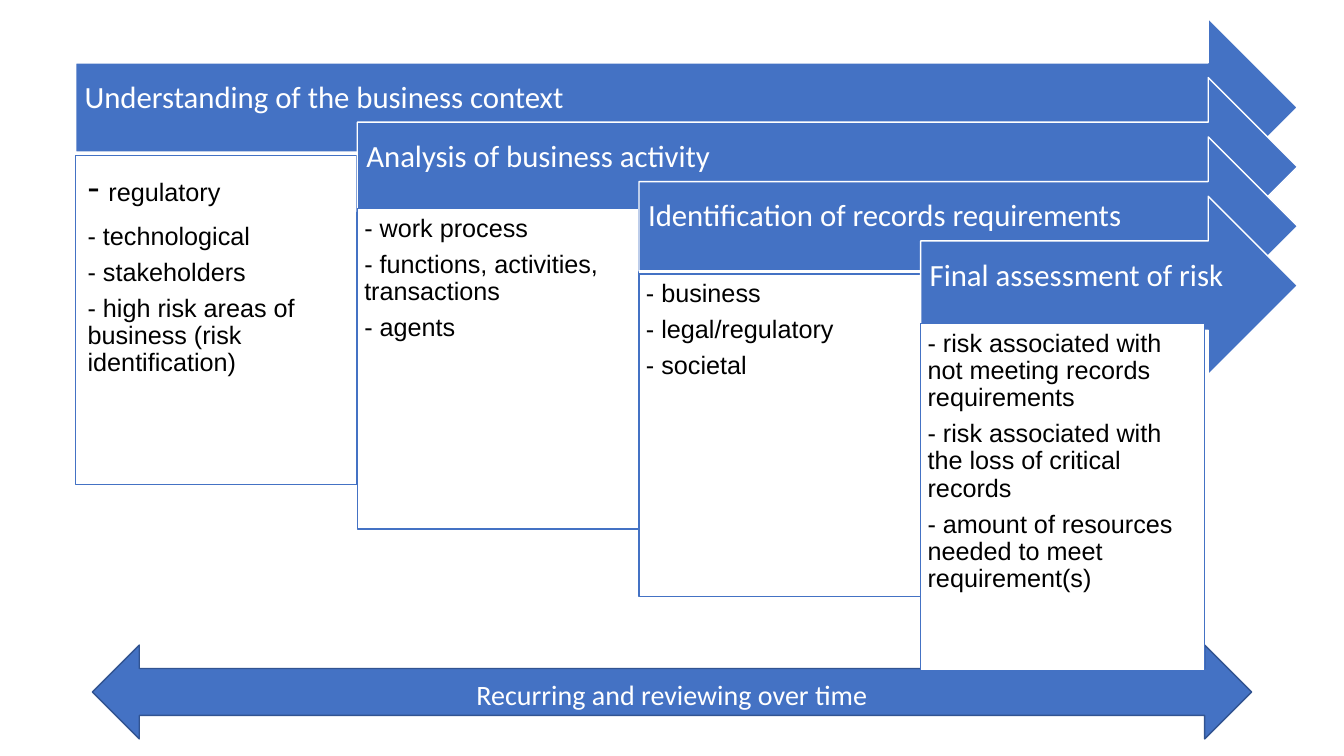
from dataclasses import dataclass
from pptx import Presentation
from pptx.dml.color import RGBColor
from pptx.enum.shapes import MSO_SHAPE
from pptx.enum.text import MSO_ANCHOR, PP_ALIGN
from pptx.util import Pt

ARROW, BOX, BOTH = MSO_SHAPE.RIGHT_ARROW, MSO_SHAPE.RECTANGLE, MSO_SHAPE.LEFT_RIGHT_ARROW
TOP, MIDDLE = MSO_ANCHOR.TOP, MSO_ANCHOR.MIDDLE
LEFT, CENTER = PP_ALIGN.LEFT, PP_ALIGN.CENTER

STAGES = [
    dict(head="Understanding of the business context", top=110.9, high=235.4, pad=8.6,
         points=["- regulatory", "- technological", "- stakeholders",
                 "- high risk areas of business (risk identification)"]),
    dict(head="Analysis of business activity", top=149, high=229, pad=5,
         points=["- work process", "- functions, activities, transactions", "- agents"]),
    dict(head="Identification of records requirements", top=195.8, high=230.4, pad=5,
         points=["- business", "- legal/regulatory", "- societal"]),
    dict(head="Final assessment of risk", top=231.1, high=247.7, pad=5,
         points=["- risk associated with not meeting records requirements",
                 "- risk associated with the loss of critical records",
                 "- amount of resources needed to meet requirement(s)"]),
]
BANNER = "Recurring and reviewing over time"


@dataclass(frozen=True)
class Theme:
    blue: str = "4472C4"
    navy: str = "325491"
    white: str = "FFFFFF"
    black: str = "000000"
    title: str = "Calibri"
    body: str = "Arial"
    head: int = 22
    foot: int = 20
    point: int = 18
    dash: int = 28


T = Theme()
EDGE, END = 54, 926.8
FIRST, DROP, STEP = 13, 42.4, 201.2
TALL, WIDE = 127.6, 201


def draw(slide, kind, x, y, w, h, fill, line):
    shape = slide.shapes.add_shape(kind, Pt(x), Pt(y), Pt(w), Pt(h))
    shape.shadow.inherit = False
    shape.fill.solid()
    shape.fill.fore_color.rgb = RGBColor.from_string(fill)
    shape.line.color.rgb = RGBColor.from_string(line)
    shape.line.width = Pt(1)
    return shape


def write(shape, lines, font, size, color, pads, anchor=MIDDLE, align=LEFT,
          ratio=0.9, after=0.35, dash=None):
    frame = shape.text_frame
    frame.word_wrap = True
    frame.vertical_anchor = anchor
    (frame.margin_left, frame.margin_top,
     frame.margin_right, frame.margin_bottom) = map(Pt, pads)
    for i, line in enumerate(lines):
        para = frame.paragraphs[0] if i == 0 else frame.add_paragraph()
        large = dash if dash and i == 0 else size
        para.alignment = align
        para.line_spacing = ratio
        para.space_after = Pt(round(large * after, 1))
        parts = [(line, font, size)]
        if large != size:
            parts = [(line[:2], T.title, dash), (line[2:], font, size)]
        for text, face, pts in parts:
            run = para.add_run()
            run.text = text
            run.font.name = face
            run.font.size = Pt(pts)
            run.font.color.rgb = RGBColor.from_string(color)


def main():
    deck = Presentation()
    deck.slide_width, deck.slide_height = Pt(960), Pt(540)
    slide = deck.slides.add_slide(deck.slide_layouts[6])

    banner = draw(slide, BOTH, 66, 460.8, 828, 67, T.blue, T.navy)
    write(banner, [BANNER], T.title, T.foot, T.white, (7.2, 3.6, 7.2, 3.6),
          align=CENTER, ratio=1.15, after=0.5)

    for i, stage in enumerate(STAGES):
        x = EDGE + i * STEP
        arrow = draw(slide, ARROW, x, FIRST + i * DROP, END - x, TALL, T.blue, T.white)
        write(arrow, [stage["head"]], T.title, T.head, T.white, (6.5, 6.5, 18, 20))
        box = draw(slide, BOX, x, stage["top"], WIDE + 2 * (i == 3), stage["high"],
                   T.white, T.blue)
        write(box, stage["points"], T.body, T.point, T.black, (stage["pad"],) * 4,
              anchor=TOP, dash=T.dash if i == 0 else None)

    deck.save("out.pptx")


if __name__ == "__main__":
    main()
